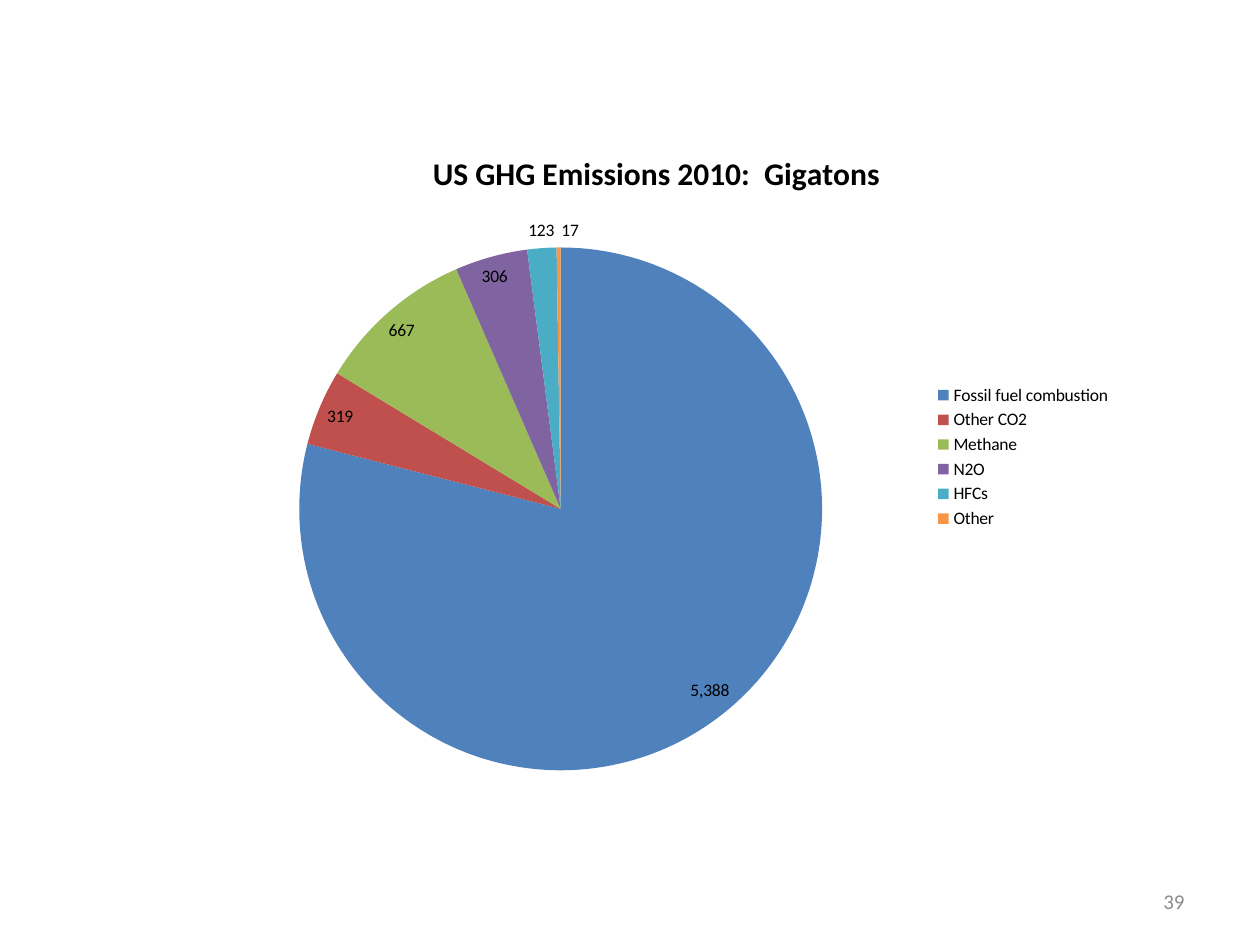
from pptx import Presentation
from pptx.chart.data import CategoryChartData
from pptx.dml.color import RGBColor
from pptx.enum.chart import XL_CHART_TYPE, XL_LABEL_POSITION, XL_LEGEND_POSITION
from pptx.enum.text import MSO_ANCHOR, PP_ALIGN
from pptx.util import Cm, Pt

FONT = "Calibri"
BLACK = RGBColor(0x00, 0x00, 0x00)
GREY = RGBColor(0x8C, 0x8C, 0x8C)

# Content
TITLE = "US GHG Emissions 2010:  Gigatons"
PAGE_NUMBER = "39"
EMISSIONS = [
    ("Fossil fuel combustion", 5388, RGBColor(0x4F, 0x81, 0xBD)),
    ("Other CO2", 319, RGBColor(0xC0, 0x50, 0x4D)),
    ("Methane", 667, RGBColor(0x9B, 0xBB, 0x59)),
    ("N2O", 306, RGBColor(0x80, 0x64, 0xA2)),
    ("HFCs", 123, RGBColor(0x4B, 0xAC, 0xC6)),
    ("Other", 17, RGBColor(0xF7, 0x96, 0x46)),
]


def set_text(tf, text, size, color=BLACK, bold=False, align=PP_ALIGN.CENTER):
    p = tf.paragraphs[0]
    p.alignment = align
    r = p.add_run()
    r.text = text
    r.font.name = FONT
    r.font.size = Pt(size)
    r.font.bold = bold
    r.font.color.rgb = color


prs = Presentation()
prs.slide_width, prs.slide_height = Cm(25.4), Cm(19.05)
s = prs.slides.add_slide(prs.slide_layouts[6])

# Slide number
tf = s.shapes.add_textbox(Cm(18.2), Cm(17.65), Cm(5.93), Cm(1.02)).text_frame
tf.word_wrap = True
tf.vertical_anchor = MSO_ANCHOR.MIDDLE
set_text(tf, PAGE_NUMBER, 12, color=GREY, align=PP_ALIGN.RIGHT)

# Pie chart
data = CategoryChartData(number_format="#,##0")
data.categories = [name for name, _, _ in EMISSIONS]
data.add_series("Series 1", [value for _, value, _ in EMISSIONS])
chart = s.shapes.add_chart(XL_CHART_TYPE.PIE, Cm(3.81), Cm(2.54),
                           Cm(18.85), Cm(13.34), data).chart
chart.font.name = FONT
chart.font.size = Pt(10)
chart.font.color.rgb = BLACK

# Title and legend
chart.has_title = True
set_text(chart.chart_title.text_frame, TITLE, 18, bold=True)
chart.has_legend = True
chart.legend.position = XL_LEGEND_POSITION.RIGHT
chart.legend.include_in_layout = False

# Slices and value labels
plot = chart.plots[0]
plot.vary_by_categories = True
for i, (_, _, color) in enumerate(EMISSIONS):
    fill = plot.series[0].points[i].format.fill
    fill.solid()
    fill.fore_color.rgb = color
plot.has_data_labels = True
labels = plot.data_labels
labels.show_value = True
labels.show_percentage = False
labels.number_format = "#,##0"
labels.number_format_is_linked = False
labels.position = XL_LABEL_POSITION.BEST_FIT

prs.save("out.pptx")
